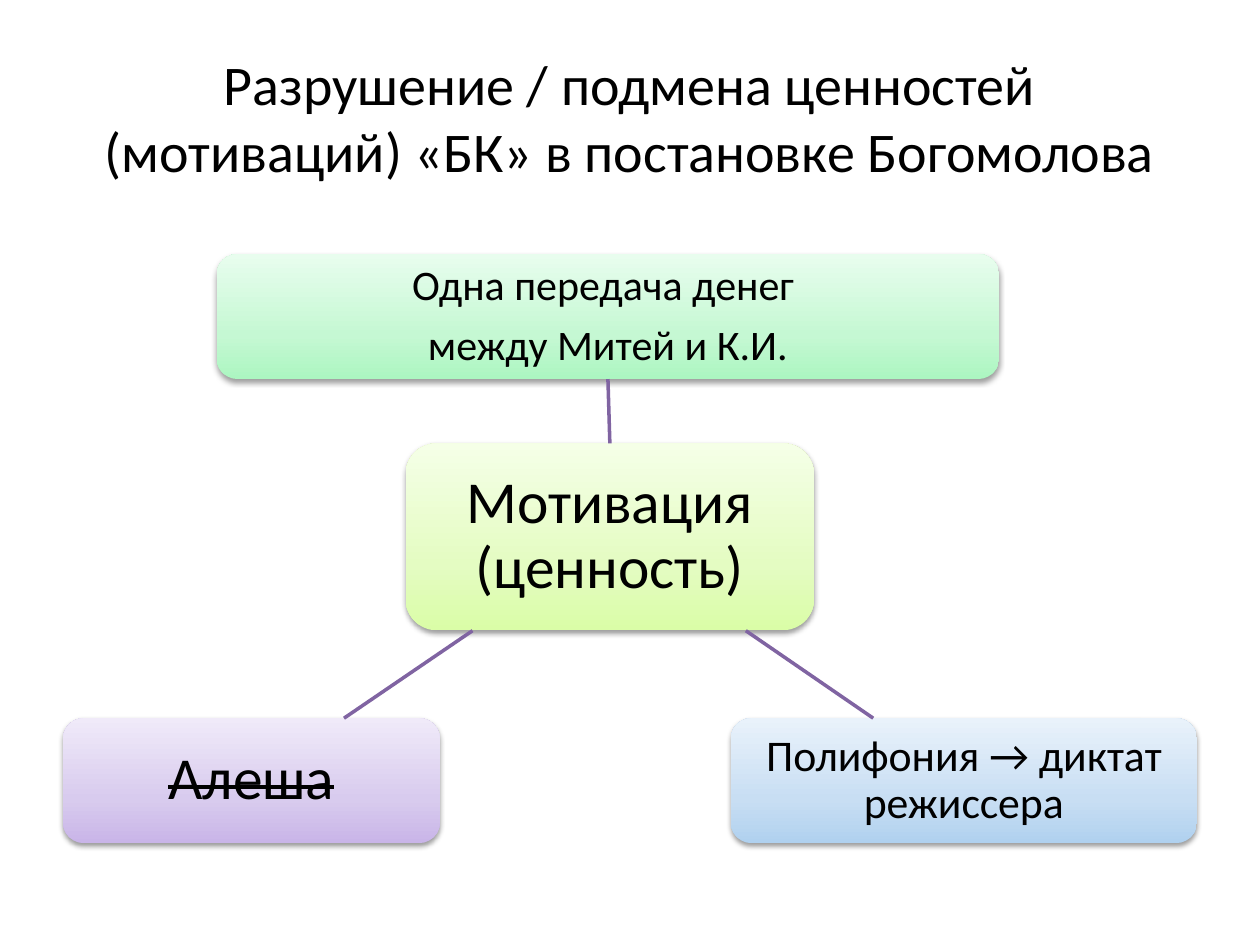
from copy import deepcopy
from dataclasses import dataclass

from lxml import etree
from pptx import Presentation
from pptx.dml.color import RGBColor
from pptx.enum import shapes, text
from pptx.oxml import ns
from pptx.util import Pt


@dataclass(frozen=True)
class Theme:
    font: str = "Calibri"
    ink: str = "000000"
    link: str = "8064A2"
    lime: tuple = ("DAFDA7", "E4FCC2", "F5FFE7")
    green: tuple = ("ACF6C1", "C5F8D3", "E8FDEE")
    blue: tuple = ("B0D1EF", "C8DEF3", "E9F2FB")
    violet: tuple = ("C9B5E8", "D8CBEE", "F0EAF9")
    title_size: int = 32
    large: int = 34
    medium: int = 25
    small: int = 24


theme = Theme()


def style_paragraph(paragraph, size):
    paragraph.alignment = text.PP_ALIGN.CENTER
    for run in paragraph.runs:
        run.font.name = theme.font
        run.font.size = Pt(size)
        run.font.color.rgb = RGBColor.from_string(theme.ink)


def add_card(box, tints, wording, size, inset):
    """Add a rounded box with a bottom-to-top gradient and a soft shadow."""
    card = slide.shapes.add_shape(
        shapes.MSO_SHAPE.ROUNDED_RECTANGLE, *(Pt(length) for length in box))
    card.fill.gradient()
    card.fill.gradient_angle = 90
    first_stop = card.fill._fill._gradFill.gsLst[0]
    first_stop.addnext(deepcopy(first_stop))
    for stop, position, tint in zip(card.fill.gradient_stops, (0, 0.35, 1), tints):
        stop.position = position
        stop.color.rgb = RGBColor.from_string(tint)
    card.line.fill.background()

    card.shadow.inherit = False
    effects = card._element.spPr.find(ns.qn("a:effectLst"))
    shadow = etree.SubElement(
        effects, ns.qn("a:outerShdw"), blurRad=str(Pt(3.1)), dist=str(Pt(1.6)),
        dir="5400000", rotWithShape="0")
    shade = etree.SubElement(shadow, ns.qn("a:srgbClr"), val="000000")
    etree.SubElement(shade, ns.qn("a:alpha"), val="38000")

    frame = card.text_frame
    frame.word_wrap = True
    frame.vertical_anchor = text.MSO_ANCHOR.MIDDLE
    frame.margin_left = frame.margin_right = Pt(inset)
    frame.margin_top = frame.margin_bottom = Pt(inset)
    frame.text = wording
    for paragraph in frame.paragraphs:
        style_paragraph(paragraph, size)
        paragraph.line_spacing = 0.9
        paragraph.space_after = Pt(0.35 * size)
    return card


prs = Presentation()
prs.slide_width, prs.slide_height = Pt(720), Pt(540)
slide = prs.slides.add_slide(prs.slide_layouts[5])

title = slide.shapes.title
title.left, title.top, title.width, title.height = Pt(36), Pt(21.6), Pt(648), Pt(90)
title.text_frame.text = (
    "Разрушение / подмена ценностей (мотиваций) «БК» в постановке Богомолова")
title.text_frame.vertical_anchor = text.MSO_ANCHOR.MIDDLE
style_paragraph(title.text_frame.paragraphs[0], theme.title_size)

motivation = add_card((231.8, 253.4, 233.4, 106.8), theme.lime,
                      "Мотивация (ценность)", theme.large, 6.5)
money = add_card((123.8, 145.2, 447.2, 71.4), theme.green,
                 "Одна передача денег \nмежду Митей и К.И.", theme.small, 5)
polyphony = add_card((417.6, 410.4, 266.4, 71.4), theme.blue,
                     "Полифония → диктат режиссера", theme.medium, 5)
alyosha = add_card((36, 410.4, 215.4, 71.4), theme.violet,
                   "Алеша", theme.large, 6.5)
alyosha.text_frame.paragraphs[0].runs[0].font._element.set("strike", "sngStrike")

links = []
for ends in ((348.5, 253.4, 347.4, 216.6),
             (426.2, 360.4, 499, 410.4),
             (270, 360.4, 196.6, 410.4)):
    link = slide.shapes.add_connector(
        shapes.MSO_CONNECTOR.STRAIGHT, *(Pt(length) for length in ends))
    link.line.color.rgb = RGBColor.from_string(theme.link)
    link.line.width = Pt(2)
    etree.SubElement(link._element.spPr, ns.qn("a:effectLst"))
    links.append(link)
links[0].begin_connect(motivation, 0)
links[0].end_connect(money, 2)

prs.save("out.pptx")
